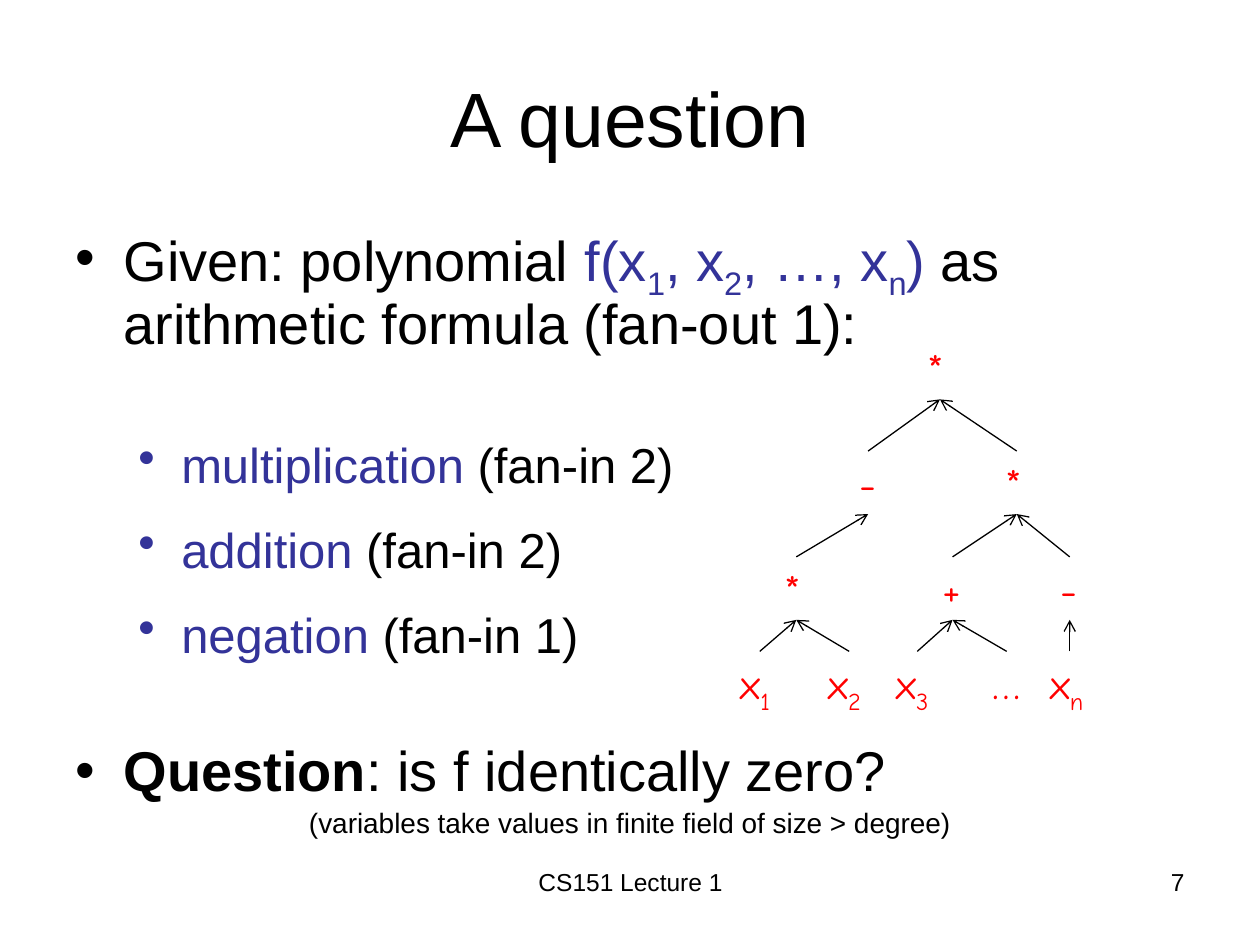
from lxml import etree
from pptx import Presentation
from pptx.dml.color import RGBColor
from pptx.enum.shapes import MSO_CONNECTOR
from pptx.enum.text import MSO_ANCHOR, MSO_AUTO_SIZE, PP_ALIGN
from pptx.oxml.ns import qn
from pptx.util import Inches, Pt

LEFT, CENTER, RIGHT = PP_ALIGN.LEFT, PP_ALIGN.CENTER, PP_ALIGN.RIGHT
MIDDLE, TOP = MSO_ANCHOR.MIDDLE, MSO_ANCHOR.TOP
NO_AUTOFIT, GROW = MSO_AUTO_SIZE.NONE, MSO_AUTO_SIZE.SHAPE_TO_FIT_TEXT
STRAIGHT = MSO_CONNECTOR.STRAIGHT

BLACK, BLUE, RED = "000000", "333399", "FF0000"
TEXT_FONT, TREE_FONT = "Arial", "Comic Neue"
SUBSCRIPT = "-25000"

# Formula tree: top of each row, and nodes as
# name: (label, subscript, centre, row, width, parent)
ROW_TOPS = (2.67, 3.58, 4.42, 5.17)
NODE_HEIGHT = 0.5
NODES = {
    "root": ("*", "", 7.46, 0, 0.4, None),
    "left minus": ("-", "", 6.89, 1, 0.34, "root"),
    "right times": ("*", "", 8.07, 1, 0.38, "root"),
    "left times": ("*", "", 6.32, 2, 0.38, "left minus"),
    "plus": ("+", "", 7.56, 2, 0.36, "right times"),
    "right minus": ("-", "", 8.49, 2, 0.34, "right times"),
    "x1": ("x", "1", 6.03, 3, 0.5, "left times"),
    "x2": ("x", "2", 6.74, 3, 0.53, "left times"),
    "x3": ("x", "3", 7.28, 3, 0.53, "plus"),
    "dots": ("…", "", 7.99, 3, 0.43, "plus"),
    "xn": ("x", "n", 8.49, 3, 0.51, "right minus"),
}


def color(hex_string):
    return RGBColor.from_string(hex_string)


def place(shape, left, top, width, height):
    shape.left, shape.top = Inches(left), Inches(top)
    shape.width, shape.height = Inches(width), Inches(height)


def add_run(paragraph, text, size, hex_color=BLACK, font=TEXT_FONT,
            bold=False, subscript=False):
    run = paragraph.add_run()
    run.text = text
    run.font.name, run.font.size, run.font.bold = font, Pt(size), bold
    run.font.color.rgb = color(hex_color)
    if subscript:
        run.font._element.set("baseline", SUBSCRIPT)


def set_bullet(paragraph, indent):
    """Hang a bullet by the indent; an indent of 0 means no bullet."""
    properties = paragraph._p.get_or_add_pPr()
    properties.set("marL", str(Inches(indent)))
    properties.set("indent", str(-Inches(indent)))
    if indent:
        bullet = etree.SubElement(properties, qn("a:buChar"))
        bullet.set("char", "•")
    else:
        etree.SubElement(properties, qn("a:buNone"))


def add_text_box(slide, left, top, width, height, wrap=True, auto_size=NO_AUTOFIT):
    box = slide.shapes.add_textbox(
        Inches(left), Inches(top), Inches(width), Inches(height))
    frame = box.text_frame
    frame.word_wrap, frame.auto_size = wrap, auto_size
    return frame


def add_arrow(slide, start, end):
    arrow = slide.shapes.add_connector(
        STRAIGHT, *(Inches(value) for value in start + end))
    arrow.line.color.rgb = color(BLACK)
    arrow.line.width = Pt(0.75)
    line = arrow.line._get_or_add_ln()
    etree.SubElement(line, qn("a:tailEnd")).set("type", "arrow")
    etree.SubElement(arrow._element.spPr, qn("a:effectLst"))


def add_title(slide):
    title = slide.shapes.title
    place(title, 0.5, 0.3, 9, 1.25)
    title.text_frame.vertical_anchor = MIDDLE
    title.text_frame.auto_size = NO_AUTOFIT
    paragraph = title.text_frame.paragraphs[0]
    paragraph.alignment = CENTER
    add_run(paragraph, "A question", 44)


def add_body(slide):
    body = slide.placeholders[1]
    place(body, 0.5, 1.75, 9, 4.95)
    frame = body.text_frame
    frame.auto_size, frame.vertical_anchor = NO_AUTOFIT, TOP
    given = frame.paragraphs[0]
    question, remark = frame.add_paragraph(), frame.add_paragraph()

    # The wide gap before the question leaves room for the list and the tree
    for paragraph, gap, indent in ((given, 6.4, 0.38), (question, 221, 0.38),
                                   (remark, 3.2, 0)):
        paragraph.line_spacing = 0.9
        paragraph.space_before = Pt(gap)
        set_bullet(paragraph, indent)

    add_run(given, "Given: polynomial ", 32)
    for text, index in (("f(x", "1"), (", x", "2"), (", …, x", "n")):
        add_run(given, text, 32, BLUE)
        add_run(given, index, 32, BLUE, subscript=True)
    add_run(given, ")", 32, BLUE)
    add_run(given, " as arithmetic formula (fan-out 1):", 32)

    add_run(question, "Question", 32, bold=True)
    add_run(question, ": is f identically zero?", 32)

    remark.alignment = CENTER
    add_run(remark, "(variables take values in finite field of size > degree)", 16)


def add_gate_list(slide):
    frame = add_text_box(slide, 1, 3.4, 4.75, 1.97)
    gates = (("multiplication", 2), ("addition", 2), ("negation", 1))
    for number, (gate, fan_in) in enumerate(gates):
        paragraph = frame.add_paragraph() if number else frame.paragraphs[0]
        paragraph.space_before = Pt(15 if number else 3)
        set_bullet(paragraph, 0.34)
        add_run(paragraph, gate, 28, BLUE)
        add_run(paragraph, f" (fan-in {fan_in})", 28)


def add_formula_tree(slide):
    for label, index, center, row, width, parent in NODES.values():
        top = ROW_TOPS[row]
        frame = add_text_box(slide, center - width / 2, top, width, NODE_HEIGHT,
                             wrap=False, auto_size=GROW)
        paragraph = frame.paragraphs[0]
        add_run(paragraph, label, 24, RED, TREE_FONT)
        if index:
            add_run(paragraph, index, 24, RED, TREE_FONT, subscript=True)
        if parent:
            parent_center, parent_row = NODES[parent][2:4]
            add_arrow(slide, (center, top),
                      (parent_center, ROW_TOPS[parent_row] + NODE_HEIGHT))


def add_footer(slide, text, left, width, alignment):
    paragraph = add_text_box(slide, left, 6.83, width, 0.52).paragraphs[0]
    paragraph.alignment = alignment
    add_run(paragraph, text, 14)


def main():
    presentation = Presentation()
    presentation.slide_width, presentation.slide_height = Inches(10), Inches(7.5)
    slide = presentation.slides.add_slide(presentation.slide_layouts[1])
    add_title(slide)
    add_body(slide)
    add_formula_tree(slide)
    add_gate_list(slide)
    add_footer(slide, "CS151 Lecture 1", 3.42, 3.17, CENTER)
    add_footer(slide, "7", 7.17, 2.33, RIGHT)
    presentation.save("out.pptx")


if __name__ == "__main__":
    main()
